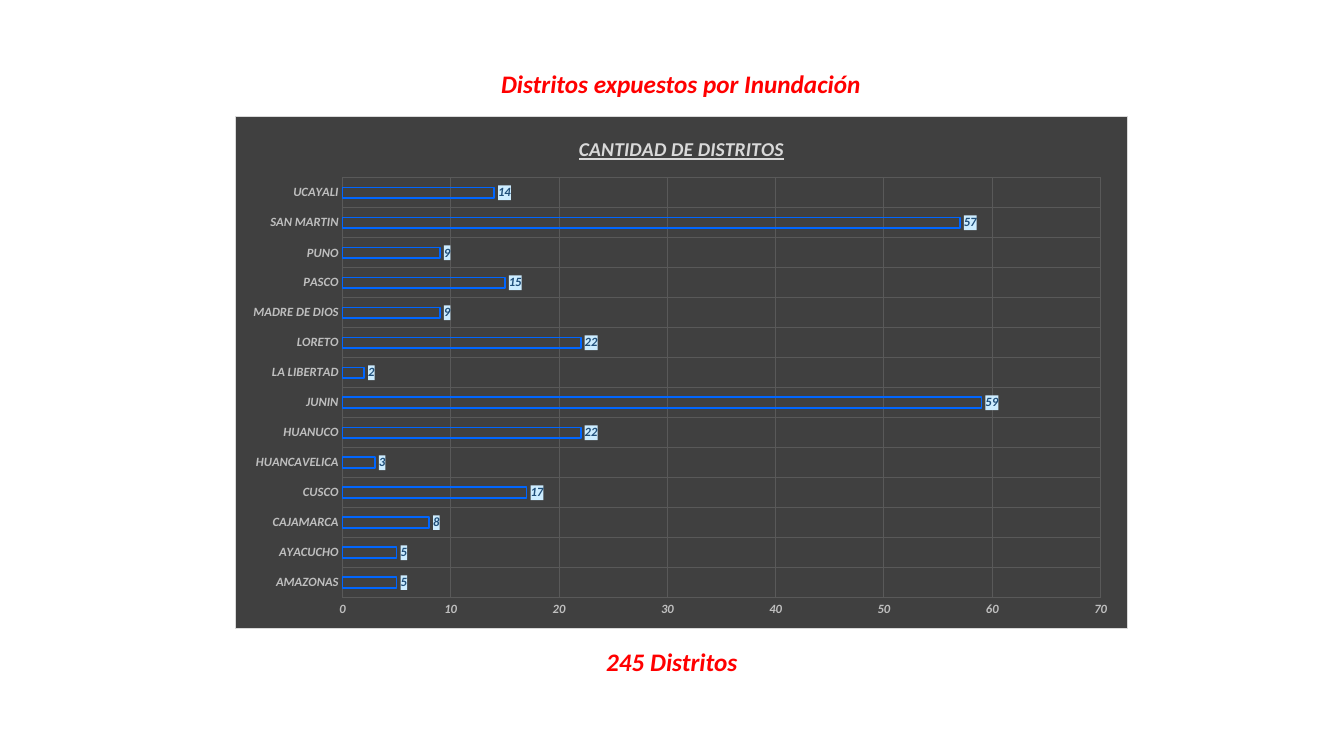
from dataclasses import dataclass

from lxml import etree
from pptx import Presentation
from pptx.chart.data import CategoryChartData
from pptx.dml.color import RGBColor
from pptx.enum.chart import XL_CHART_TYPE as ChartType
from pptx.enum.chart import XL_LABEL_POSITION as LabelPos
from pptx.enum.chart import XL_TICK_MARK as TickMark
from pptx.enum.text import MSO_AUTO_SIZE as AutoSize
from pptx.enum.text import PP_ALIGN as Align
from pptx.oxml import parse_xml
from pptx.oxml.ns import nsdecls
from pptx.util import Pt

FONT = "Calibri"
RED = "FF0000"
DARK = "404040"
GRID = "595959"
AXIS_TEXT = "BFBFBF"
LIGHT = "D9D9D9"
BAR_BLUE = "0066FF"
LABEL_TEXT = "1F4E79"
LABEL_FILL = "CCECFF"

DISTRICTS = {
    "AMAZONAS": 5, "AYACUCHO": 5, "CAJAMARCA": 8, "CUSCO": 17,
    "HUANCAVELICA": 3, "HUANUCO": 22, "JUNIN": 59, "LA LIBERTAD": 2,
    "LORETO": 22, "MADRE DE DIOS": 9, "PASCO": 15, "PUNO": 9,
    "SAN MARTIN": 57, "UCAYALI": 14,
}


@dataclass
class Caption:
    text: str
    left: float
    top: float
    width: float
    height: float
    wrap: bool


CAPTIONS = [
    Caption("Distritos expuestos por Inundación", 349.2, 45.4, 274.3, 28.8, False),
    Caption("245 Distritos", 425.5, 458, 108.7, 28.8, True),
]


def rgb(color: str) -> RGBColor:
    return RGBColor.from_string(color)


def set_font(font, size: float, color: str) -> None:
    """Apply the bold italic face that all text on the slide shares."""
    font.name = FONT
    font.size = Pt(size)
    font.bold = font.italic = True
    font.color.rgb = rgb(color)


def add_caption(slide, caption: Caption) -> None:
    box = slide.shapes.add_textbox(Pt(caption.left), Pt(caption.top),
                                   Pt(caption.width), Pt(caption.height))
    tf = box.text_frame
    tf.word_wrap = caption.wrap
    tf.auto_size = AutoSize.SHAPE_TO_FIT_TEXT
    p = tf.paragraphs[0]
    p.alignment = Align.CENTER
    r = p.add_run()
    r.text = caption.text
    set_font(r.font, 18, RED)


def area_format(fill: str, border: str = "") -> etree.ElementBase:
    """Shape properties for chart parts that have no public format object."""
    line = f'<a:solidFill><a:srgbClr val="{border}"/></a:solidFill>' if border else "<a:noFill/>"
    return parse_xml(
        f'<c:spPr {nsdecls("c", "a")}><a:solidFill><a:srgbClr val="{fill}"/></a:solidFill>'
        f'<a:ln w="{Pt(0.75)}">{line}</a:ln></c:spPr>')


def place_plot(plot_area, x: float, y: float, w: float, h: float) -> None:
    """Fix the inner plot area, in fractions of the chart."""
    for old in plot_area.xpath("c:layout"):
        plot_area.remove(old)
    sizes = "".join(f'<c:{key} val="{value}"/>'
                    for key, value in (("x", x), ("y", y), ("w", w), ("h", h)))
    plot_area.insert(0, parse_xml(
        f'<c:layout {nsdecls("c")}><c:manualLayout><c:layoutTarget val="inner"/>'
        f'<c:xMode val="edge"/><c:yMode val="edge"/>{sizes}</c:manualLayout></c:layout>'))


def style_axis(axis) -> None:
    axis.major_tick_mark = axis.minor_tick_mark = TickMark.NONE
    axis.has_major_gridlines = True
    grid = axis.major_gridlines.format.line
    grid.width = Pt(0.75)
    grid.color.rgb = rgb(GRID)
    axis.format.line.fill.background()
    set_font(axis.tick_labels.font, 9, AXIS_TEXT)


def add_district_chart(slide) -> None:
    data = CategoryChartData(number_format="#,##0")
    data.categories = list(DISTRICTS)
    data.add_series("Series 1", list(DISTRICTS.values()))
    chart = slide.shapes.add_chart(ChartType.BAR_CLUSTERED, Pt(167.8), Pt(82.8),
                                   Pt(637.9), Pt(366.5), data).chart
    chart.has_legend = False
    chart.font.name = FONT
    chart.font.size = Pt(10)

    chart.has_title = True
    r = chart.chart_title.text_frame.paragraphs[0].add_run()
    r.text = "CANTIDAD DE DISTRITOS"
    set_font(r.font, 14, LIGHT)
    r.font.underline = True
    chart.chart_title.include_in_layout = False

    style_axis(chart.category_axis)
    values = chart.value_axis
    style_axis(values)
    values.minimum_scale, values.maximum_scale, values.major_unit = 0, 70, 10
    values.tick_labels.number_format = "#,##0"
    values.tick_labels.number_format_is_linked = False

    plot = chart.plots[0]
    plot.vary_by_categories = False
    plot.gap_width = 182
    plot.overlap = -50
    bars = plot.series[0]
    bars.format.fill.background()
    bars.format.line.width = Pt(1.25)
    bars.format.line.color.rgb = rgb(BAR_BLUE)

    labels = bars.data_labels
    labels.show_value = True
    labels.position = LabelPos.OUTSIDE_END
    labels.number_format = "#,##0"
    labels.number_format_is_linked = False
    set_font(labels.font, 9, LABEL_TEXT)

    root = chart.element
    root.xpath(".//c:ser/c:dLbls/c:txPr")[0].addprevious(area_format(LABEL_FILL))
    root.xpath("c:chart")[0].addnext(area_format(DARK, LIGHT))
    place_plot(root.xpath("c:chart/c:plotArea")[0], 0.12, 0.12, 0.85, 0.82)


def main() -> None:
    prs = Presentation()
    prs.slide_width, prs.slide_height = Pt(960), Pt(540)
    slide = prs.slides.add_slide(prs.slide_layouts[6])
    for caption in CAPTIONS:
        add_caption(slide, caption)
    add_district_chart(slide)
    prs.save("out.pptx")


if __name__ == "__main__":
    main()
